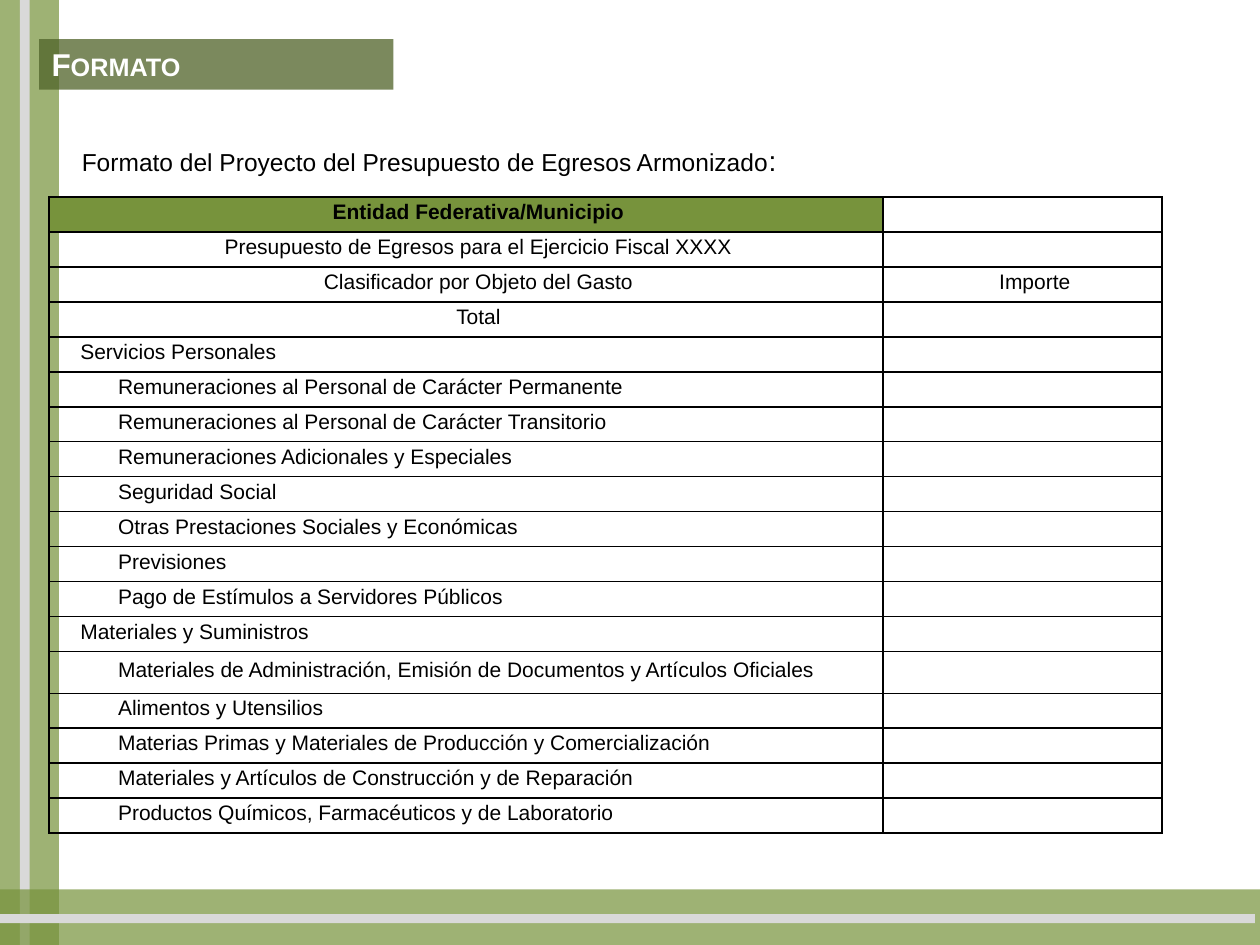
from lxml import etree
from pptx import Presentation
from pptx import util as u
from pptx.dml.color import RGBColor
from pptx.enum import shapes, text
from pptx.oxml.ns import qn

COLORS = {
    "olive": "77933C",
    "dark_olive": "4F6228",
    "gray": "D9D9D9",
    "black": "000000",
    "white": "FFFFFF",
}
TABLE_HEIGHT = 12.83
TALL_ROW, TALL_HEIGHT = 13, 0.84

HEADINGS = [
    ("Entidad Federativa/Municipio", ""),
    ("Presupuesto de Egresos para el Ejercicio Fiscal XXXX", ""),
    ("Clasificador por Objeto del Gasto", "Importe"),
    ("Total", ""),
]
CHAPTERS = {
    "Servicios Personales": [
        "Remuneraciones al Personal de Carácter Permanente",
        "Remuneraciones al Personal de Carácter Transitorio",
        "Remuneraciones Adicionales y Especiales",
        "Seguridad Social",
        "Otras Prestaciones Sociales y Económicas",
        "Previsiones",
        "Pago de Estímulos a Servidores Públicos",
    ],
    "Materiales y Suministros": [
        "Materiales de Administración, Emisión de Documentos y Artículos Oficiales",
        "Alimentos y Utensilios",
        "Materias Primas y Materiales de Producción y Comercialización",
        "Materiales y Artículos de Construcción y de Reparación",
        "Productos Químicos, Farmacéuticos y de Laboratorio",
    ],
}


class SlideBuilder:
    def __init__(self, slide, font="Arial"):
        self.slide = slide
        self.font = font

    def style(self, font, size, color="black", bold=False):
        font.name = self.font
        font.size = u.Pt(size)
        font.bold = bold
        font.color.rgb = RGBColor.from_string(COLORS[color])

    def bar(self, left, top, width, height, color, opacity=100):
        shape = self.slide.shapes.add_shape(
            shapes.MSO_SHAPE.RECTANGLE, u.Cm(left), u.Cm(top), u.Cm(width), u.Cm(height))
        shape.shadow.inherit = False
        shape.line.fill.background()
        shape.fill.solid()
        shape.fill.fore_color.rgb = RGBColor.from_string(COLORS[color])
        if opacity < 100:
            fill_color = shape.fill._xPr.find(qn("a:solidFill"))[0]
            etree.SubElement(fill_color, qn("a:alpha"), val=str(opacity * 1000))
        return shape

    def title(self, wording, *box):
        shape = self.bar(*box, "dark_olive", 75)
        shape.text_frame.vertical_anchor = text.MSO_ANCHOR.TOP
        paragraph = shape.text_frame.paragraphs[0]
        paragraph.alignment = text.PP_ALIGN.LEFT
        run = paragraph.add_run()
        run.text = wording
        self.style(run.font, 18, "white", bold=True)
        run._r.get_or_add_rPr().set("cap", "small")

    def caption(self, parts, left, top, width, height):
        shape = self.slide.shapes.add_textbox(u.Cm(left), u.Cm(top), u.Cm(width), u.Cm(height))
        shape.text_frame.word_wrap = True
        paragraph = shape.text_frame.paragraphs[0]
        for wording, size in parts:
            run = paragraph.add_run()
            run.text = wording
            self.style(run.font, size)

    def table(self, rows, left, top, widths, heights):
        shape = self.slide.shapes.add_table(
            len(rows), len(widths), u.Cm(left), u.Cm(top),
            u.Cm(sum(widths)), u.Cm(sum(heights)))
        table = shape.table
        table.first_row = table.horz_banding = False
        for column, width in zip(table.columns, widths):
            column.width = u.Cm(width)
        for row, height, (wordings, alignment, indent) in zip(table.rows, heights, rows):
            row.height = u.Cm(height)
            for cell, wording in zip(row.cells, wordings):
                self.cell(cell, wording, alignment, indent)
        return table

    def cell(self, cell, wording, alignment, indent):
        cell.margin_left = cell.margin_right = u.Cm(0.13)
        cell.margin_top = cell.margin_bottom = 0
        cell.vertical_anchor = text.MSO_ANCHOR.MIDDLE
        paragraph = cell.text_frame.paragraphs[0]
        paragraph.text = wording
        paragraph.alignment = alignment
        paragraph.line_spacing = u.Pt(10.8)
        paragraph.space_before = paragraph.space_after = u.Pt(2)
        self.style(paragraph.font, 12)
        properties = paragraph._p.get_or_add_pPr()
        properties.set("marL", str(u.Cm(indent)))
        properties.set("indent", str(u.Cm(0.5)))
        # Borders come before the fill in the cell properties
        for side in ("lnL", "lnR", "lnT", "lnB"):
            line = etree.SubElement(cell._tc.get_or_add_tcPr(), qn(f"a:{side}"), w=str(u.Pt(1)))
            fill = etree.SubElement(line, qn("a:solidFill"))
            etree.SubElement(fill, qn("a:srgbClr"), val=COLORS["black"])
        cell.fill.background()


def main():
    presentation = Presentation()
    presentation.slide_width, presentation.slide_height = u.Cm(25.4), u.Cm(19.05)
    builder = SlideBuilder(presentation.slides.add_slide(presentation.slide_layouts[6]))

    # Side and bottom bands
    builder.bar(0, 0, 1.19, 19.05, "olive", 71)
    builder.bar(0.4, 0, 0.2, 19.05, "gray")
    builder.bar(0, 17.93, 25.4, 1.12, "olive", 71)
    builder.bar(0, 18.43, 25.3, 0.18, "gray")

    # Caption
    builder.caption([("Formato del Proyecto del Presupuesto de Egresos Armonizado", 14), (":", 16)],
                    1.4, 2.77, 19.46, 0.94)

    # Budget table
    rows = [(pair, text.PP_ALIGN.CENTER, 0) for pair in HEADINGS]
    for chapter, concepts in CHAPTERS.items():
        rows.append(((chapter, ""), text.PP_ALIGN.JUSTIFY, 0))
        rows += [((concept, ""), text.PP_ALIGN.JUSTIFY, 0.76) for concept in concepts]
    heights = [(TABLE_HEIGHT - TALL_HEIGHT) / (len(rows) - 1)] * len(rows)
    heights[TALL_ROW] = TALL_HEIGHT
    table = builder.table(rows, 0.99, 3.97, [16.81, 5.62], heights)
    header = table.cell(0, 0)
    header.fill.solid()
    header.fill.fore_color.rgb = RGBColor.from_string(COLORS["olive"])
    header.text_frame.paragraphs[0].font.bold = True

    # Title
    builder.title("Formato", 0.79, 0.79, 7.14, 1.02)

    presentation.save("out.pptx")


if __name__ == "__main__":
    main()
